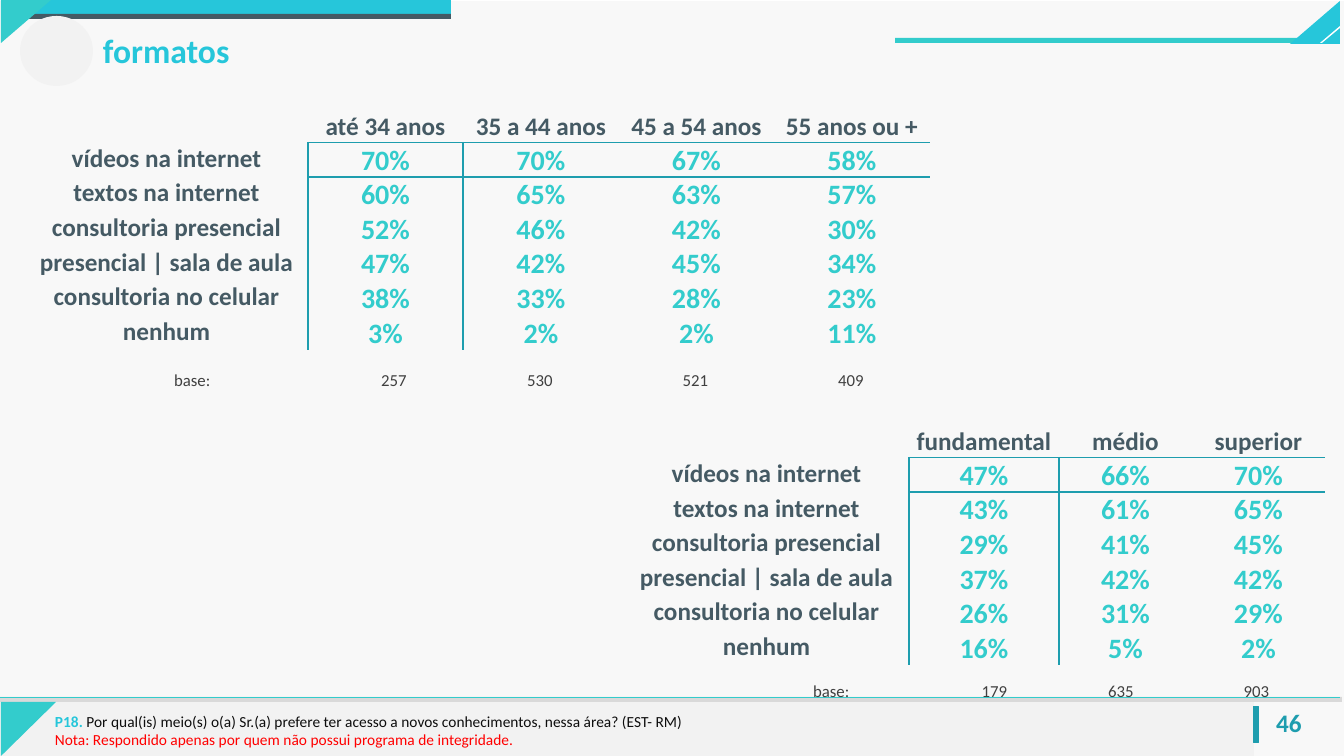
"""Build the "formatos" slide: preferred learning formats by age and by schooling."""
from lxml.etree import SubElement
from pptx import Presentation
from pptx.dml.color import RGBColor
from pptx.enum.dml import MSO_PATTERN
from pptx.enum.shapes import MSO_CONNECTOR, MSO_SHAPE
from pptx.enum.text import MSO_ANCHOR as ANCHOR, PP_ALIGN as ALIGN
from pptx.oxml import parse_xml
from pptx.oxml.ns import nsdecls, qn
from pptx.util import Pt

COLORS = {
    "white": "FFFFFF", "paper": "F8F8F8", "pale": "F2F2F2", "gray": "D9D9D9",
    "cyan": "26C6DA", "turquoise": "33CCCC", "teal": "1E9DAE", "slate": "455A64",
    "base": "404040", "ink": "0D0D0D", "red": "FF0000",
}
FONT = "Calibri"
PX = 914400 / 100.8
SLIDE_W, SLIDE_H = 1344, 756
HEADER_H, ROW_H, BASE_H = 40, 34, 37
CELL_INSET, BASE_SHIFT = 1, 29
NO_STYLE = "{2D5ABB26-0587-4C30-8999-92F81FD0307C}"

FORMATS = ["vídeos na internet", "textos na internet", "consultoria presencial",
           "presencial | sala de aula", "consultoria no celular", "nenhum"]
SURVEYS = [
    {
        "at": (25, 102), "columns": [283, 155, 156, 155, 156],
        "groups": ["até 34 anos", "35 a 44 anos", "45 a 54 anos", "55 anos ou +"],
        "shares": [(70, 70, 67, 58), (60, 65, 63, 57), (52, 46, 42, 30),
                   (47, 42, 45, 34), (38, 33, 28, 23), (3, 2, 2, 11)],
        "base_at": (164, 355), "base_columns": [143, 155, 156, 155, 156],
        "base": [257, 530, 521, 409],
    },
    {
        "at": (624, 417), "columns": [285, 150, 133, 133],
        "groups": ["fundamental", "médio", "superior"],
        "shares": [(47, 66, 70), (43, 61, 65), (29, 41, 45),
                   (37, 42, 42), (26, 31, 29), (16, 5, 2)],
        "base_at": (803, 666), "base_columns": [114, 136, 136, 135],
        "base": [179, 635, 903],
    },
]
BANDS = [
    ((0, 702, 1254, 54), "pale"),
    ((9, 0, 442, 16), "cyan"),
    ((-1, 697, 1343, 5), "gray"),
    ((23, 14, 428, 5), "slate"),
    ((895, 38, 443, 5), "turquoise"),
]
CORNERS = [
    ([(1, 0), (51, 0), (1, 43)], "turquoise"),
    ([(1340, 1), (1290, 44), (1340, 44)], "cyan"),
    ([(1340, 28), (1340, 26), (1320, 43), (1322, 43)], "white"),
    ([(1, 702), (56, 702), (1, 756)], "turquoise"),
]
PAGE = [[("46", 18, "teal", True)]]
TITLE = [[("formatos", 24, "cyan", True)]]
QUESTION = [
    [("P18. ", 11, "cyan", True),
     ("Por qual(is) meio(s) o(a) Sr.(a) prefere ter acesso a novos conhecimentos, "
      "nessa área? (EST- RM)", 11, "ink", False)],
    [("Nota: Respondido apenas por quem não possui programa de integridade.",
      11, "red", False)],
]


def px(value):
    return round(value * PX)


def rgb(color):
    return RGBColor.from_string(COLORS[color])


def paint(shape, color):
    shape.shadow.inherit = False
    shape.fill.solid()
    shape.fill.fore_color.rgb = rgb(color)
    shape.line.fill.background()
    return shape


def add_solid(slide, kind, box, color):
    return paint(slide.shapes.add_shape(kind, *map(px, box)), color)


def add_run(paragraph, text, size, color, bold):
    run = paragraph.add_run()
    run.text = text
    run.font.name, run.font.size, run.font.bold = FONT, Pt(size), bold
    run.font.color.rgb = rgb(color)


def add_text(slide, box, lines, align=ALIGN.LEFT, wrap=True):
    frame = slide.shapes.add_textbox(*map(px, box)).text_frame
    frame.word_wrap = wrap
    for number, line in enumerate(lines):
        paragraph = frame.paragraphs[0] if number == 0 else frame.add_paragraph()
        paragraph.alignment = align
        for run in line:
            add_run(paragraph, *run)


def add_grid(slide, at, columns, rows):
    box = (*at, sum(columns), sum(rows))
    grid = slide.shapes.add_table(len(rows), len(columns), *map(px, box)).table
    grid.first_row = grid.horz_banding = False
    grid._tbl.tblPr.find(qn("a:tableStyleId")).text = NO_STYLE
    for column, width in zip(grid.columns, columns):
        column.width = px(width)
    for row, height in zip(grid.rows, rows):
        row.height = px(height)
    for cell in grid.iter_cells():
        cell.fill.background()
    return grid


def add_borders(cell, sides):
    properties = cell._tc.get_or_add_tcPr()
    for place, side in enumerate(side for side in "LRTB" if side in sides):
        properties.insert(place, parse_xml(
            f'<a:ln{side} {nsdecls("a")} w="12700"><a:solidFill>'
            f'<a:srgbClr val="{COLORS["teal"]}"/></a:solidFill></a:ln{side}>'))


def fill_cell(cell, text, size, color, anchor, sides):
    cell.margin_left = cell.margin_right = cell.margin_top = px(CELL_INSET)
    cell.margin_bottom = 0
    cell.vertical_anchor = anchor
    paragraph = cell.text_frame.paragraphs[0]
    paragraph.alignment = ALIGN.CENTER
    add_run(paragraph, text, size, color, True)
    add_borders(cell, sides)


def add_survey(slide, survey):
    grid = add_grid(slide, survey["at"], survey["columns"],
                    [HEADER_H] + [ROW_H] * len(FORMATS))
    for column, group in enumerate(survey["groups"], 1):
        fill_cell(grid.cell(0, column), group, 18, "slate", ANCHOR.BOTTOM, "B")
    for row, (label, shares) in enumerate(zip(FORMATS, survey["shares"]), 1):
        fill_cell(grid.cell(row, 0), label, 18, "slate", ANCHOR.TOP, "R")
        for column, share in enumerate(shares, 1):
            sides = ("L" if column == 1 else "") + ("T" if row == 1 else "")
            fill_cell(grid.cell(row, column), f"{share}%", 20, "turquoise",
                      ANCHOR.MIDDLE, sides)


def add_base(slide, survey):
    grid = add_grid(slide, survey["base_at"], survey["base_columns"], [BASE_H])
    for column, text in enumerate(["base:", *survey["base"]]):
        cell = grid.cell(0, column)
        paragraph = cell.text_frame.paragraphs[0]
        paragraph.alignment = ALIGN.CENTER if column else ALIGN.LEFT
        paragraph.line_spacing = 1.5
        add_run(paragraph, str(text), 12, "base", False)
    grid.cell(0, 1).margin_left = px(BASE_SHIFT)


def add_frame(slide):
    paper = add_solid(slide, MSO_SHAPE.RECTANGLE, (0, 0, SLIDE_W, SLIDE_H), "paper")
    paper.fill.patterned()
    paper.fill.pattern = MSO_PATTERN.DARK_HORIZONTAL
    paper.fill.fore_color.rgb = rgb("paper")
    paper.fill.back_color.rgb = rgb("white")
    for box, color in BANDS:
        add_solid(slide, MSO_SHAPE.RECTANGLE, box, color)
    for points, color in CORNERS:
        outline = slide.shapes.build_freeform(*points[0], scale=PX)
        outline.add_line_segments(points[1:], close=True)
        paint(outline.convert_to_shape(), color)
    rule = slide.shapes.add_connector(MSO_CONNECTOR.STRAIGHT,
                                      *map(px, (-4, 697, 1340, 697)))
    rule.line.color.rgb = rgb("turquoise")
    rule.line.width = Pt(0.5)
    SubElement(rule._element.spPr, qn("a:effectLst"))
    add_text(slide, (1258, 702, 62, 40), PAGE, ALIGN.CENTER, wrap=False)
    page_bar = add_solid(slide, MSO_SHAPE.RECTANGLE, (1238, 722, 36, 5), "teal")
    page_bar.rotation = 270
    page_bar.line.color.rgb = rgb("teal")
    page_bar.line.width = Pt(0.75)


def main():
    deck = Presentation()
    deck.slide_width, deck.slide_height = px(SLIDE_W), px(SLIDE_H)
    slide = deck.slides.add_slide(deck.slide_layouts[6])
    add_frame(slide)
    add_text(slide, (45, 707, 1211, 66), QUESTION)
    add_text(slide, (93, 25, 588, 50), TITLE)
    for survey in SURVEYS:
        add_survey(slide, survey)
        add_base(slide, survey)
    add_solid(slide, MSO_SHAPE.OVAL, (20, 16, 73, 70), "pale")
    deck.save("out.pptx")


if __name__ == "__main__":
    main()
